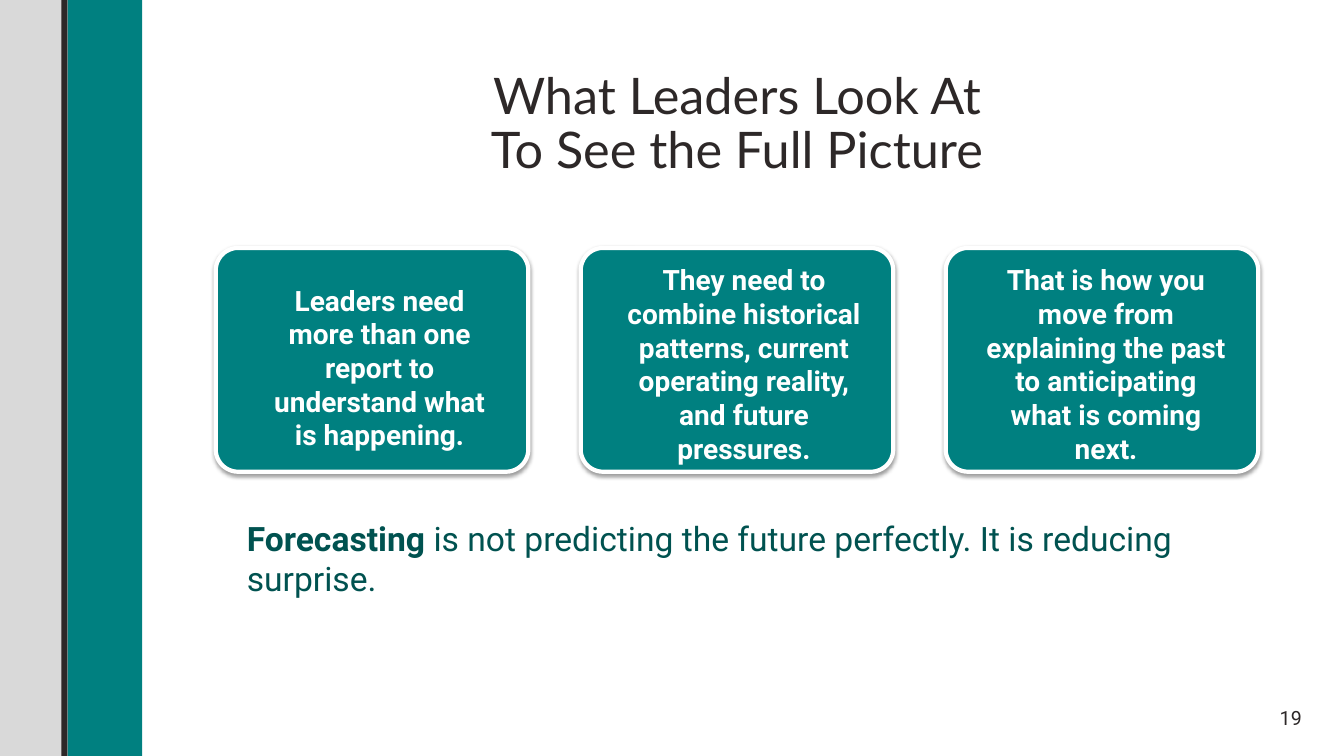
import lxml.etree
import pptx
import pptx.dml.color
import pptx.enum.shapes
import pptx.enum.text
import pptx.oxml.ns
import pptx.util

SCALE = 9144
COLOURS = {"teal": "008080", "deep": "005250", "dark": "2D2828", "grey": "D9D9D9", "white": "FFFFFF"}
ALIGN = pptx.enum.text.PP_ALIGN
ANCHOR = pptx.enum.text.MSO_ANCHOR
SHAPE = pptx.enum.shapes.MSO_SHAPE


def px(length):
    return pptx.util.Emu(length * SCALE)


def rgb(name):
    return pptx.dml.color.RGBColor.from_string(COLOURS[name])


class SlideBuilder:
    """Draws styled elements on the current slide."""

    def __init__(self, deck):
        self.heading_font = "Lato"
        self.body_font = "Roboto"
        self.page = deck.slides.add_slide(deck.slide_layouts[5])

    def style(self, span, font, size, colour, bold=False):
        span.font.name = font
        span.font.size = pptx.util.Pt(size)
        span.font.color.rgb = rgb(colour)
        span.font.bold = bold

    def title(self, text, left, top, width, height):
        box = self.page.shapes.title
        box.left, box.top, box.width, box.height = map(px, (left, top, width, height))
        frame = box.text_frame
        frame.text = text
        frame.word_wrap = True
        frame.auto_size = pptx.enum.text.MSO_AUTO_SIZE.NONE
        frame.vertical_anchor = ANCHOR.BOTTOM
        para = frame.paragraphs[0]
        para.alignment = ALIGN.CENTER
        para.line_spacing = 0.9
        for span in para.runs:
            self.style(span, self.heading_font, 36, "dark")

    def shape(self, kind, left, top, width, height, colour):
        shape = self.page.shapes.add_shape(kind, *map(px, (left, top, width, height)))
        shape.fill.solid()
        shape.fill.fore_color.rgb = rgb(colour)
        shape.line.fill.background()
        shape.shadow.inherit = False
        return shape

    def card(self, left, top, width, height):
        card = self.shape(SHAPE.ROUNDED_RECTANGLE, left, top, width, height, "teal")
        card.adjustments[0] = 0.1
        card.line.color.rgb = rgb("white")
        card.line.width = pptx.util.Pt(3)
        qn = pptx.oxml.ns.qn
        effects = card.element.spPr.find(qn("a:effectLst"))
        shadow = lxml.etree.SubElement(
            effects, qn("a:outerShdw"), blurRad=str(pptx.util.Pt(3.1)),
            dist=str(pptx.util.Pt(1.6)), dir="5400000", algn="t", rotWithShape="0")
        black = lxml.etree.SubElement(shadow, qn("a:srgbClr"), val="000000")
        lxml.etree.SubElement(black, qn("a:alpha"), val="38000")

    def text(self, spans, left, top, width, height, size, colour,
             align=ALIGN.LEFT, anchor=ANCHOR.TOP, indent=14):
        box = self.page.shapes.add_textbox(*map(px, (left, top, width, height)))
        frame = box.text_frame
        frame.word_wrap = True
        frame.vertical_anchor = anchor
        para = frame.paragraphs[0]
        para.alignment = align
        para._p.get_or_add_pPr().set("marL", str(px(indent)))
        for words, bold in spans:
            span = para.add_run()
            span.text = words
            self.style(span, self.body_font, size, colour, bold)


def main():
    deck = pptx.Presentation()
    deck.slide_width, deck.slide_height = px(1333), px(750)
    slide = SlideBuilder(deck)

    for left, width, colour in ((0, 74, "grey"), (67, 74, "teal"), (61, 6, "dark")):
        slide.shape(SHAPE.RECTANGLE, left, 0, width, 750, colour)
    slide.title("What Leaders Look At\vTo See the Full Picture", 221, 38, 1020, 145)

    messages = (
        ("Leaders need more than one report to understand what is happening.", 235, 276, 269, 162),
        ("They need to combine historical patterns, current operating reality, and future pressures.",
         588, 256, 286, 197),
        ("That is how you move from explaining the past to anticipating what is coming next.",
         953, 256, 274, 183),
    )
    for column, (message, *place) in enumerate(messages):
        slide.card(214 + column * 362, 246, 310, 222)
        slide.text([(message, True)], *place, 20, "white", align=ALIGN.CENTER)

    slide.text([("Forecasting ", True),
                ("is not predicting the future perfectly. It is reducing surprise.", False)],
               221, 509, 1066, 85, 24, "deep")
    slide.text([("19", False)], 1127, 692, 174, 40, 14, "dark",
               align=ALIGN.RIGHT, anchor=ANCHOR.MIDDLE, indent=0)
    deck.save("out.pptx")


if __name__ == "__main__":
    main()
